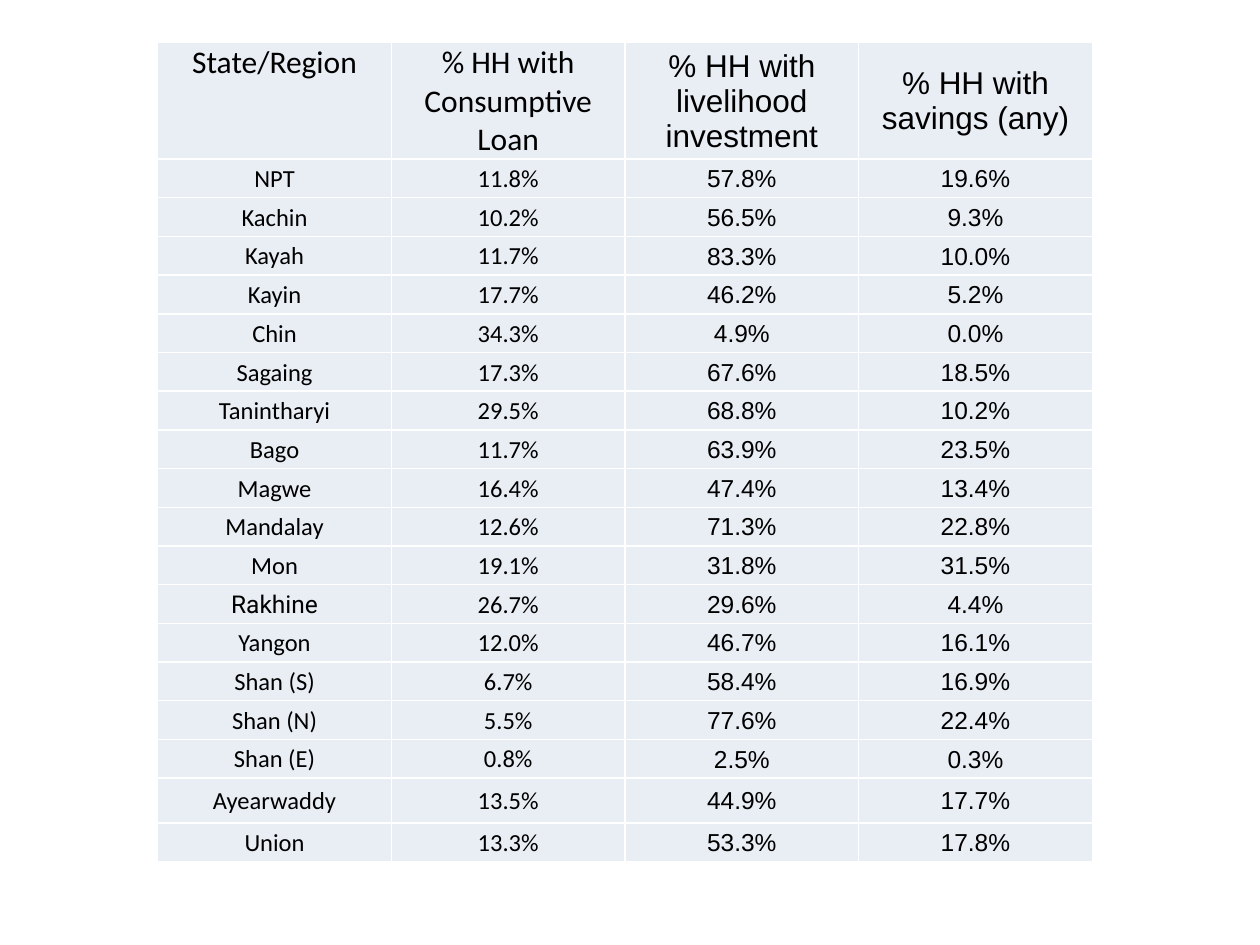
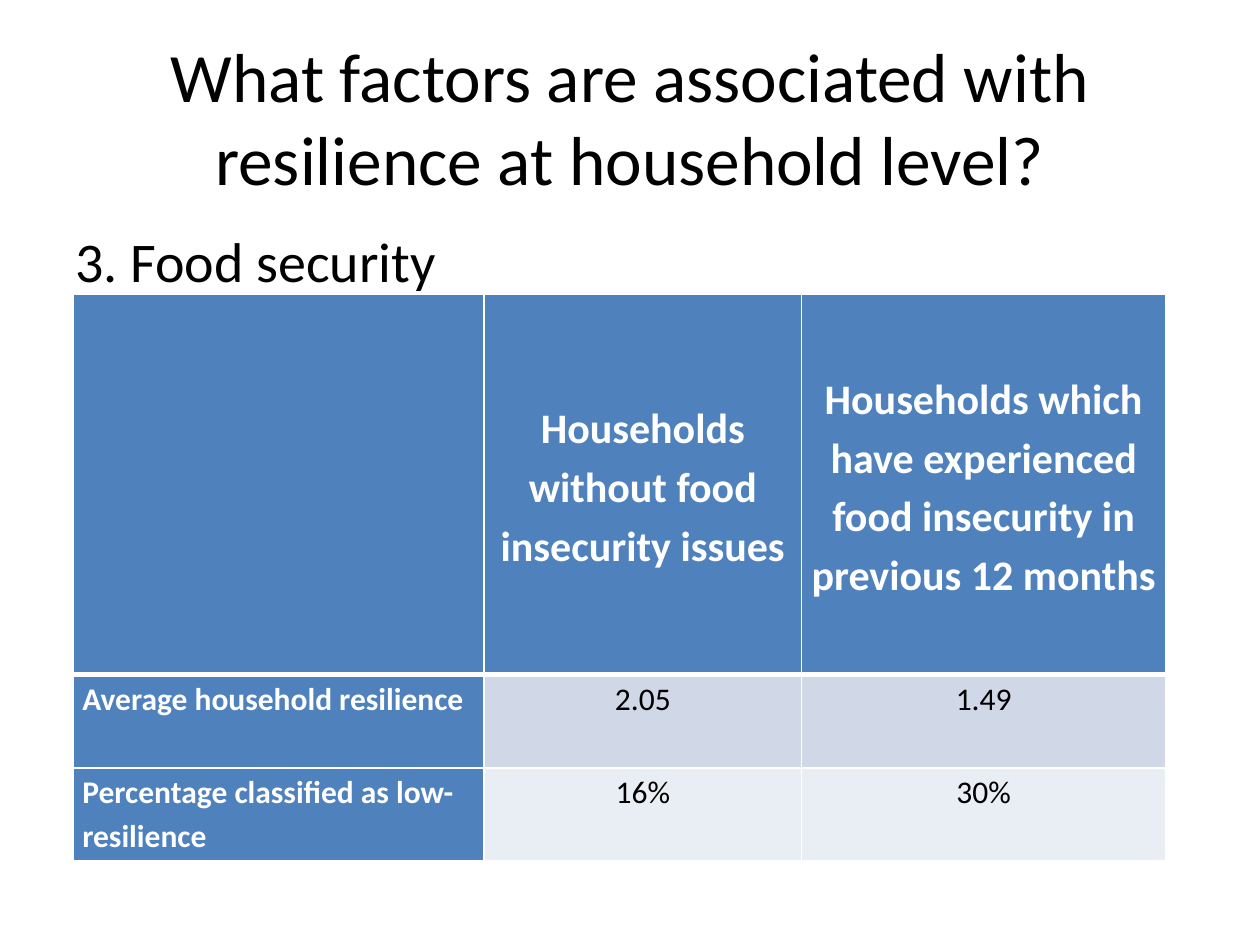
import pptx
import pptx.util
import pptx.dml.color
import pptx.enum.text
import pptx.oxml
import pptx.oxml.ns
from lxml import etree

Cm, Pt = pptx.util.Cm, pptx.util.Pt
RGB = pptx.dml.color.RGBColor
ALIGN = pptx.enum.text.PP_ALIGN
ANCHOR = pptx.enum.text.MSO_ANCHOR

BLACK = RGB(0x00, 0x00, 0x00)
WHITE = RGB(0xFF, 0xFF, 0xFF)
BLUE = RGB(0x4F, 0x81, 0xBD)
BAND = RGB(0xD0, 0xD8, 0xE8)
PALE = RGB(0xE9, 0xED, 0xF4)
FONT = "Calibri"


def add_text(tf, text, size, color=BLACK, font=FONT, bold=False, align=ALIGN.CENTER):
    p = tf.paragraphs[0]
    p.alignment = align
    r = p.add_run()
    r.text = text
    r.font.size = Pt(size)
    r.font.name = font
    r.font.bold = bold
    r.font.color.rgb = color
    return p


def format_cell(cell, fill, anchor, side, top, bottom_line=1):
    cell.fill.solid()
    cell.fill.fore_color.rgb = fill
    cell.vertical_anchor = anchor
    cell.margin_left = cell.margin_right = Cm(side)
    cell.margin_top, cell.margin_bottom = Cm(top), 0
    # White borders, placed ahead of the fill
    tcPr = cell._tc.get_or_add_tcPr()
    widths = {"lnL": 1, "lnR": 1, "lnT": 1, "lnB": bottom_line}
    for i, (tag, width) in enumerate(widths.items()):
        ln = etree.Element(pptx.oxml.ns.qn("a:" + tag), w=str(Pt(width)))
        solid = etree.SubElement(ln, pptx.oxml.ns.qn("a:solidFill"))
        etree.SubElement(solid, pptx.oxml.ns.qn("a:srgbClr"), val=str(WHITE))
        tcPr.insert(i, ln)


prs = pptx.Presentation()
prs.slide_width, prs.slide_height = Cm(25.4), Cm(19.05)

# Slide 1: loans, investment and savings by region
s = prs.slides.add_slide(prs.slide_layouts[6])
regions = [
    ("State/Region", "% HH with Consumptive Loan", "% HH with livelihood investment",
     "% HH with savings (any)"),
    ("NPT", "11.8%", "57.8%", "19.6%"),
    ("Kachin", "10.2%", "56.5%", "9.3%"),
    ("Kayah", "11.7%", "83.3%", "10.0%"),
    ("Kayin", "17.7%", "46.2%", "5.2%"),
    ("Chin", "34.3%", "4.9%", "0.0%"),
    ("Sagaing", "17.3%", "67.6%", "18.5%"),
    ("Tanintharyi", "29.5%", "68.8%", "10.2%"),
    ("Bago", "11.7%", "63.9%", "23.5%"),
    ("Magwe", "16.4%", "47.4%", "13.4%"),
    ("Mandalay", "12.6%", "71.3%", "22.8%"),
    ("Mon", "19.1%", "31.8%", "31.5%"),
    ("Rakhine", "26.7%", "29.6%", "4.4%"),
    ("Yangon", "12.0%", "46.7%", "16.1%"),
    ("Shan (S)", "6.7%", "58.4%", "16.9%"),
    ("Shan (N)", "5.5%", "77.6%", "22.4%"),
    ("Shan (E)", "0.8%", "2.5%", "0.3%"),
    ("Ayearwaddy", "13.5%", "44.9%", "17.7%"),
    ("Union", "13.3%", "53.3%", "17.8%"),
]
tbl = s.shapes.add_table(len(regions), 4, Cm(3.18), Cm(0.85), Cm(18.84), Cm(16.43)).table
tbl.first_row = tbl.horz_banding = False
for col in tbl.columns:
    col.width = Cm(4.71)
for i, values in enumerate(regions):
    tbl.rows[i].height = Cm({"State/Region": 2.06, "Ayearwaddy": 0.9}.get(values[0], 0.78))
    for j, text in enumerate(values):
        cell = tbl.cell(i, j)
        anchor = ANCHOR.TOP if i == j == 0 else ANCHOR.MIDDLE
        format_cell(cell, PALE, anchor, 0.03, 0.03)
        font = "Roboto" if text == "Rakhine" else FONT if j < 2 else "Arial"
        add_text(cell.text_frame, text, 18 if i == 0 else 14, font=font)

# Slide 2: title and subheading
s = prs.slides.add_slide(prs.slide_layouts[5])
title = s.shapes.title
title.left, title.top, title.width, title.height = Cm(1.27), Cm(0.76), Cm(22.86), Cm(3.18)
title.text_frame.vertical_anchor = ANCHOR.MIDDLE
add_text(title.text_frame, "What factors are associated with resilience at household level?", 39.6)

tf = s.shapes.add_textbox(Cm(1.27), Cm(4.45), Cm(22.86), Cm(12.57)).text_frame
tf.word_wrap = True
p = add_text(tf, "3. Food security", 32, align=ALIGN.LEFT)
p.space_before = Pt(6.4)

# Slide 2: resilience by food security
resilience = [
    ("", "Households without food insecurity issues",
     "Households which have experienced food insecurity in previous 12 months"),
    ("Average household resilience", "2.05", "1.49"),
    ("Percentage classified as low-resilience", "16%", "30%"),
]
tbl = s.shapes.add_table(3, 3, Cm(1.48), Cm(5.93), Cm(22.02), Cm(11.43)).table
tbl.first_col = True
for col, width in zip(tbl.columns, (8.28, 6.4, 7.34)):
    col.width = Cm(width)
for row, height in zip(tbl.rows, (7.67, 1.88, 1.88)):
    row.height = Cm(height)
for i, values in enumerate(resilience):
    for j, text in enumerate(values):
        cell = tbl.cell(i, j)
        heading = i == 0 or j == 0
        fill = BLUE if heading else (BAND, PALE)[i - 1]
        anchor = ANCHOR.MIDDLE if i == 0 else ANCHOR.TOP
        format_cell(cell, fill, anchor, 0.18, 0, bottom_line=3 if i == 0 else 1)
        if i == 1:
            # The first body row shares the thick rule under the header
            cell._tc.tcPr.find(pptx.oxml.ns.qn("a:lnT")).set("w", str(Pt(3)))
        if text:
            p = add_text(cell.text_frame, text, 24 if i == 0 else 18,
                         WHITE if heading else BLACK, bold=heading,
                         align=ALIGN.LEFT if j == 0 else ALIGN.CENTER)
            p.line_spacing = 1.15

prs.save("out.pptx")
